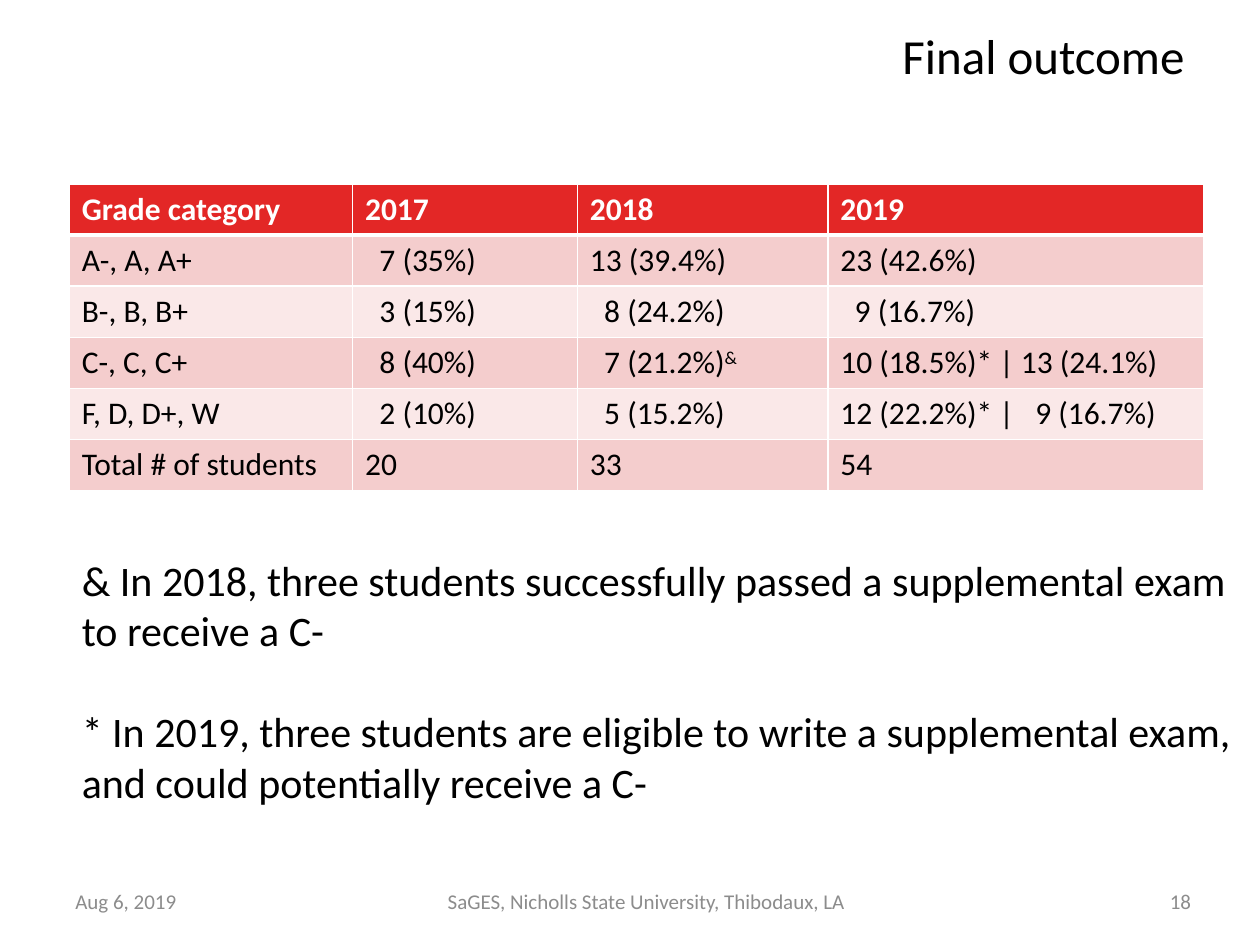
from lxml import etree
from pptx import Presentation
from pptx.dml.color import RGBColor
from pptx.enum.text import MSO_ANCHOR, MSO_AUTO_SIZE, PP_ALIGN
from pptx.oxml.ns import qn
from pptx.util import Cm, Pt

LEFT, CENTER, RIGHT = PP_ALIGN.LEFT, PP_ALIGN.CENTER, PP_ALIGN.RIGHT
MIDDLE = MSO_ANCHOR.MIDDLE
FIT_SHAPE = MSO_AUTO_SIZE.SHAPE_TO_FIT_TEXT
TITLE_ONLY = 5

BLACK, WHITE, GREY = "000000", "FFFFFF", "8C8C8C"
HEADER_RED, BAND_DARK, BAND_LIGHT = "E32726", "F4CDCD", "FAE8E8"


def color(hex_string):
    return RGBColor.from_string(hex_string)


def format_font(font, size, hex_string, bold=False):
    values = {"name": "Calibri", "size": Pt(size), "bold": bold}
    for attribute, value in values.items():
        setattr(font, attribute, value)
    font.color.rgb = color(hex_string)


presentation = Presentation()
presentation.slide_width = Cm(25.4)
presentation.slide_height = Cm(19.05)
slide = presentation.slides.add_slide(presentation.slide_layouts[TITLE_ONLY])

# Title
title = slide.shapes.title
title_place = {"left": Cm(3.73), "top": Cm(0), "width": Cm(20.4), "height": Cm(2.21)}
for attribute, value in title_place.items():
    setattr(title, attribute, value)
title.text_frame.text = "Final outcome"
title.text_frame.vertical_anchor = MIDDLE
paragraph = title.text_frame.paragraphs[0]
paragraph.alignment = RIGHT
format_font(paragraph.font, 28, BLACK)

# Grade table: single-digit counts are indented by the cell margin
grades = [
    ["Grade category", "2017", "2018", "2019"],
    ["A-, A, A+", "7 (35%)", "13 (39.4%)", "23 (42.6%)"],
    ["B-, B, B+", "3 (15%)", "8 (24.2%)", "9 (16.7%)"],
    ["C-, C, C+", "8 (40%)", "7 (21.2%)", "10 (18.5%)* | 13 (24.1%)"],
    ["F, D, D+, W", "2 (10%)", "5 (15.2%)", "12 (22.2%)* |\t9 (16.7%)"],
    ["Total # of students", "20", "33", "54"],
]
column_widths = [5.71, 4.53, 5.05, 7.57]
row_height = 1.03
table = slide.shapes.add_table(
    len(grades), len(column_widths), Cm(1.4), Cm(3.71),
    Cm(sum(column_widths)), Cm(row_height * len(grades))).table
for column, width in zip(table.columns, column_widths):
    column.width = Cm(width)

for row_index, row_values in enumerate(grades):
    table.rows[row_index].height = Cm(row_height)
    is_header = row_index == 0
    fill = HEADER_RED if is_header else (BAND_LIGHT, BAND_DARK)[row_index % 2]
    border_widths = {"lnL": 1, "lnR": 1, "lnT": 3 if row_index == 1 else 1,
                     "lnB": 3 if is_header else 1}
    for column_index, value in enumerate(row_values):
        cell = table.cell(row_index, column_index)
        properties = cell._tc.get_or_add_tcPr()
        for side, width in border_widths.items():
            line = etree.SubElement(properties, qn(f"a:{side}"), w=str(Pt(width)))
            line_fill = etree.SubElement(line, qn("a:solidFill"))
            etree.SubElement(line_fill, qn("a:srgbClr"), val=WHITE)
        cell.fill.solid()
        cell.fill.fore_color.rgb = color(fill)
        cell.margin_left = Cm(0.54 if value[1:3] == " (" else 0.25)

        paragraph = cell.text_frame.paragraphs[0]
        if "\t" in value:
            tabs = etree.SubElement(paragraph._p.get_or_add_pPr(), qn("a:tabLst"))
            etree.SubElement(tabs, qn("a:tab"), pos=str(Cm(3.93)), algn="l")
        run = paragraph.add_run()
        run.text = value
        format_font(run.font, 18, WHITE if is_header else BLACK, is_header)

# Footnote mark on the 2018 C grades
mark = table.cell(3, 2).text_frame.paragraphs[0].add_run()
mark.text = "&"
format_font(mark.font, 18, BLACK)
mark.font._element.set("baseline", "30000")

# Footnotes
notes = [
    ["& In 2018, three students successfully passed a supplemental exam",
     "to receive a C-"],
    ["* In 2019, three students are eligible to write a supplemental exam,",
     "and could potentially receive a C-"],
]
frame = slide.shapes.add_textbox(Cm(1.4), Cm(11.05), Cm(24.08), Cm(5.38)).text_frame
frame.word_wrap = False
frame.auto_size = FIT_SHAPE
frame.text = "\n".join(line for note in notes for line in note)
for paragraph in frame.paragraphs:
    format_font(paragraph.font, 24, BLACK)
frame.paragraphs[len(notes[0])].space_before = Pt(29)

# Footer
footers = [
    ("Aug 6, 2019", 1.27, 2.9, LEFT),
    ("SaGES, Nicholls State University, Thibodaux, LA", 5.64, 14.78, CENTER),
    ("18", 21.87, 2.39, RIGHT),
]
for text, left, width, alignment in footers:
    frame = slide.shapes.add_textbox(Cm(left), Cm(17.65), Cm(width), Cm(1.02)).text_frame
    frame.word_wrap = True
    frame.vertical_anchor = MIDDLE
    frame.text = text
    paragraph = frame.paragraphs[0]
    paragraph.alignment = alignment
    format_font(paragraph.font, 12, GREY)

presentation.save("out.pptx")
